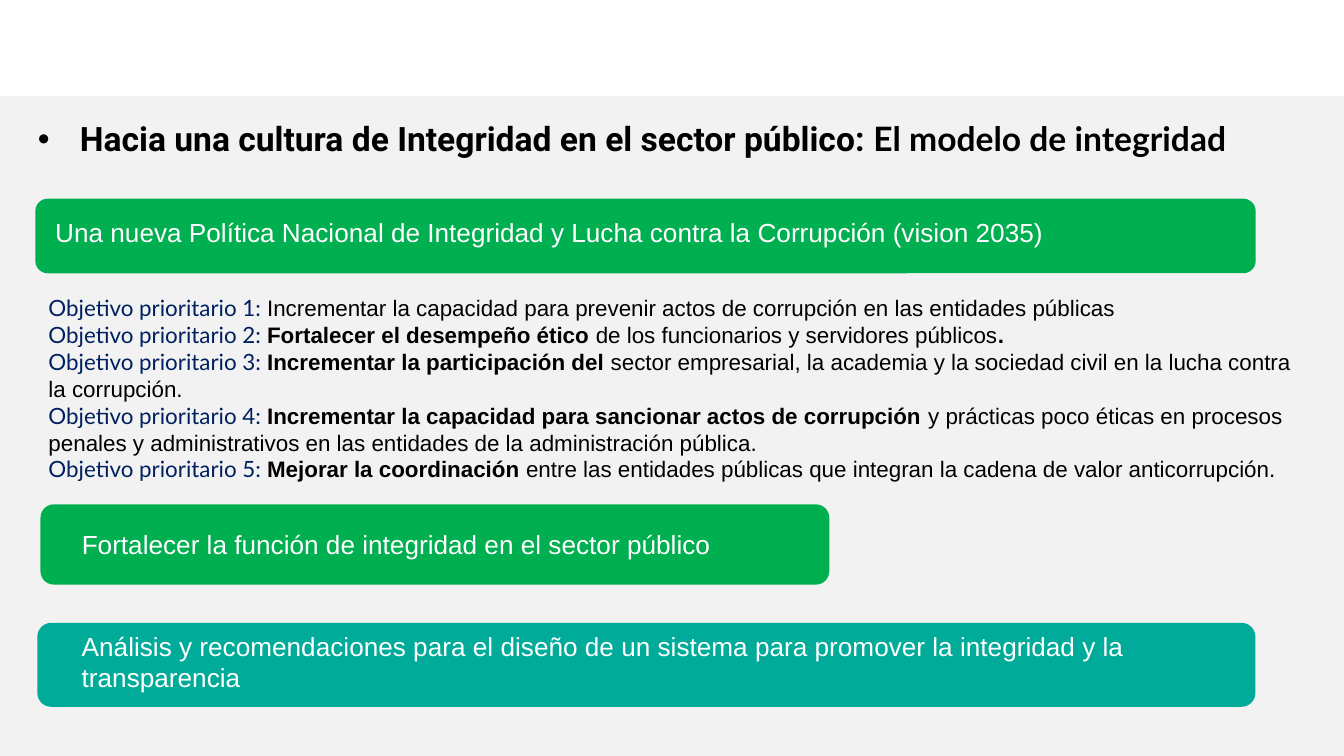
from pptx import Presentation
from pptx.dml.color import RGBColor
from pptx.enum.shapes import MSO_SHAPE
from pptx.oxml import parse_xml
from pptx.oxml.ns import nsdecls
from pptx.util import Pt

WHITE, BLACK, NAVY = "FFFFFF", "000000", "002060"
GREEN, TEAL = "00B050", "00AC99"


def color(hex_value):
    return RGBColor.from_string(hex_value)


def add_text(box, paragraphs):
    """Fill a new text box; each run is (text, size, font, colour, bold)."""
    frame = slide.shapes.add_textbox(*map(Pt, box)).text_frame
    frame.word_wrap = True
    for i, runs in enumerate(paragraphs):
        paragraph = frame.paragraphs[0] if i == 0 else frame.add_paragraph()
        for text, size, font, hex_value, bold in runs:
            run = paragraph.add_run()
            run.text = text
            run.font.size = Pt(size)
            run.font.name = font
            run.font.bold = bold
            run.font.color.rgb = color(hex_value)
    return frame


presentation = Presentation()
presentation.slide_width, presentation.slide_height = Pt(720), Pt(405)
slide = presentation.slides.add_slide(presentation.slide_layouts[6])
slide.background.fill.solid()
slide.background.fill.fore_color.rgb = color("F2F2F2")

# White header strip and the coloured bars
panels = [
    (MSO_SHAPE.RECTANGLE, (0, 0, 720, 51.4), WHITE),
    (MSO_SHAPE.ROUNDED_RECTANGLE, (18.9, 106.4, 653.8, 40), GREEN),
    (MSO_SHAPE.ROUNDED_RECTANGLE, (21.7, 270.2, 422.6, 43), GREEN),
    (MSO_SHAPE.ROUNDED_RECTANGLE, (20, 333.7, 652.6, 45), TEAL),
]
for preset, box, fill in panels:
    panel = slide.shapes.add_shape(preset, *map(Pt, box))
    panel.shadow.inherit = False
    panel.fill.solid()
    panel.fill.fore_color.rgb = color(fill)
    panel.line.fill.background()

# Bar captions
policy = "Una nueva Política Nacional de Integridad y Lucha contra la Corrupción (vision 2035)"
add_text((15.8, 102.2, 771, 36), [[
    (" ", 24, "Arial", WHITE, False),
    (policy, 14, "Arial", WHITE, False),
]])
captions = [
    ((36.7, 279.4, 572.4, 24.5), "Fortalecer la función de integridad en el sector público"),
    ((36.7, 334.1, 635.8, 41), "Análisis y recomendaciones para el diseño de un sistema "
     "para promover la integridad y la transparencia"),
]
for box, caption in captions:
    add_text(box, [[(caption, 14, "Arial", WHITE, False)]])

# Priority objectives: (text, bold) parts after a numbered label
objectives = [
    [("Incrementar la capacidad para prevenir actos de corrupción en las entidades públicas", False)],
    [("Fortalecer el desempeño ético ", True),
     ("de los funcionarios y servidores públicos", False),
     (".", True)],
    [("Incrementar la participación del ", True),
     ("sector empresarial, la academia y la sociedad civil en la lucha contra la corrupción.", False)],
    [("Incrementar la capacidad para sancionar actos de corrupción ", True),
     ("y prácticas poco éticas en procesos penales y administrativos en las entidades "
      "de la administración pública.", False)],
    [("Mejorar la coordinación ", True),
     ("entre las entidades públicas que integran la cadena de valor anticorrupción.", False)],
]
add_text((18.9, 154.1, 686.9, 108.7), [
    [(f"Objetivo prioritario {number}: ", 12, "Lato", NAVY, False)]
    + [(text, 12, "Arial", BLACK, bold) for text, bold in parts]
    for number, parts in enumerate(objectives, 1)
])

# Bulleted title
title = add_text((13.2, 59.8, 776.9, 29), [[
    ("Hacia una cultura de Integridad en el sector público: ", 18, "Roboto", BLACK, True),
    ("El modelo de integridad", 18, "Lato", BLACK, True),
]])
properties = title.paragraphs[0]._p.get_or_add_pPr()
properties.set("marL", str(Pt(22.5)))
properties.set("indent", str(-Pt(22.5)))
for bullet in (f'<a:buClr {nsdecls("a")}><a:srgbClr val="{BLACK}"/></a:buClr>',
               f'<a:buFont {nsdecls("a")} typeface="Arial"/>',
               f'<a:buChar {nsdecls("a")} char="•"/>'):
    properties.append(parse_xml(bullet))

presentation.save("out.pptx")
